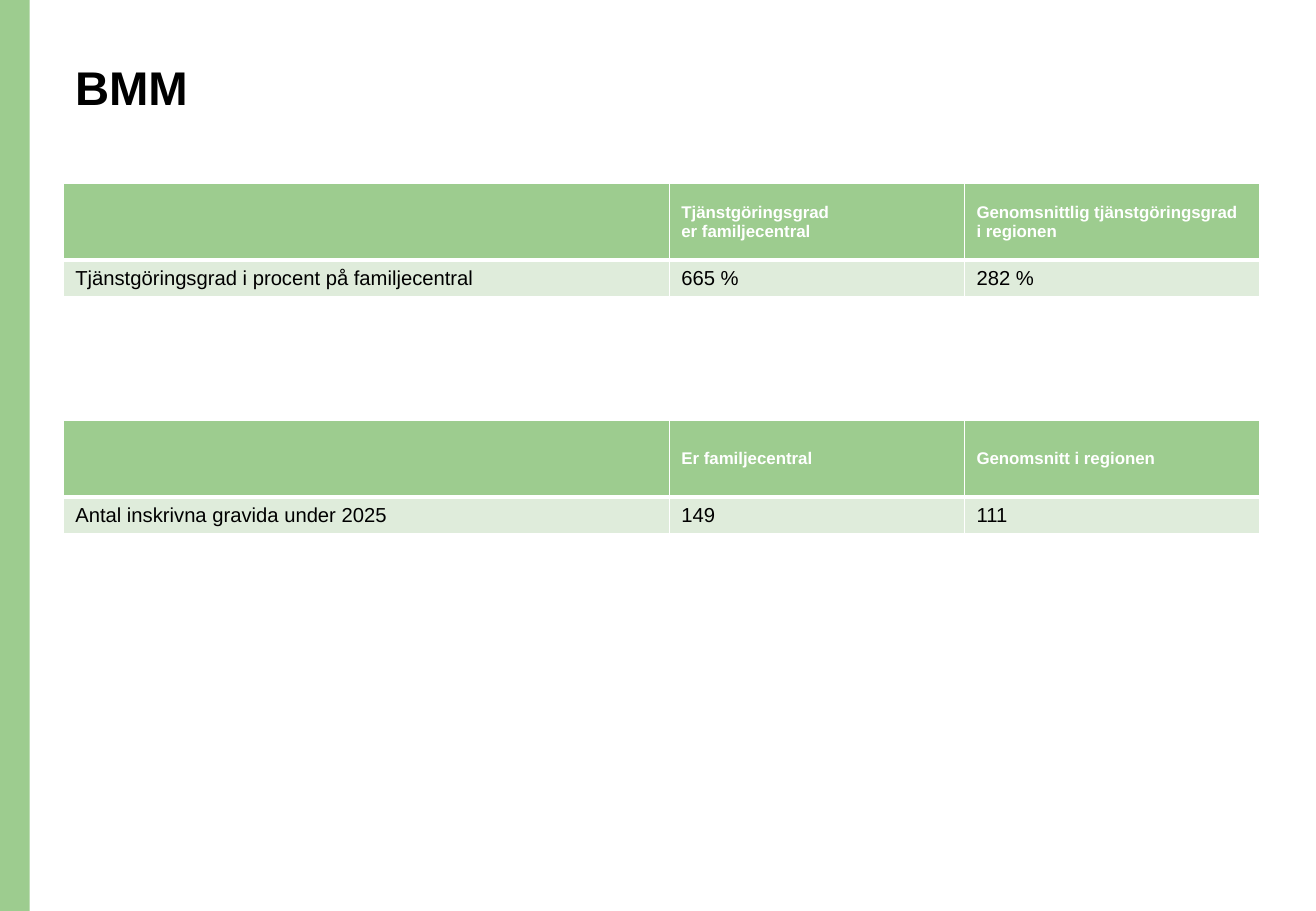
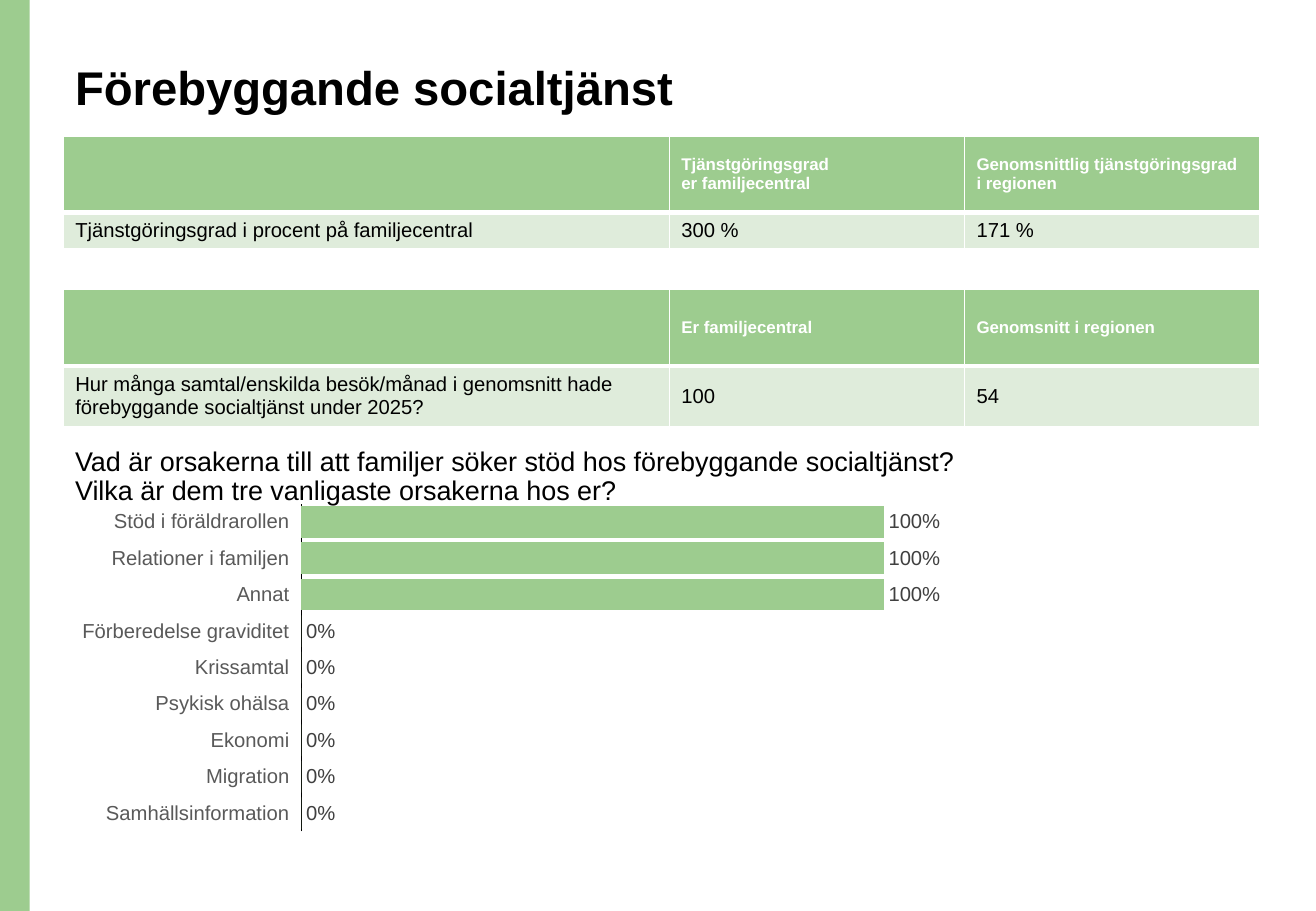
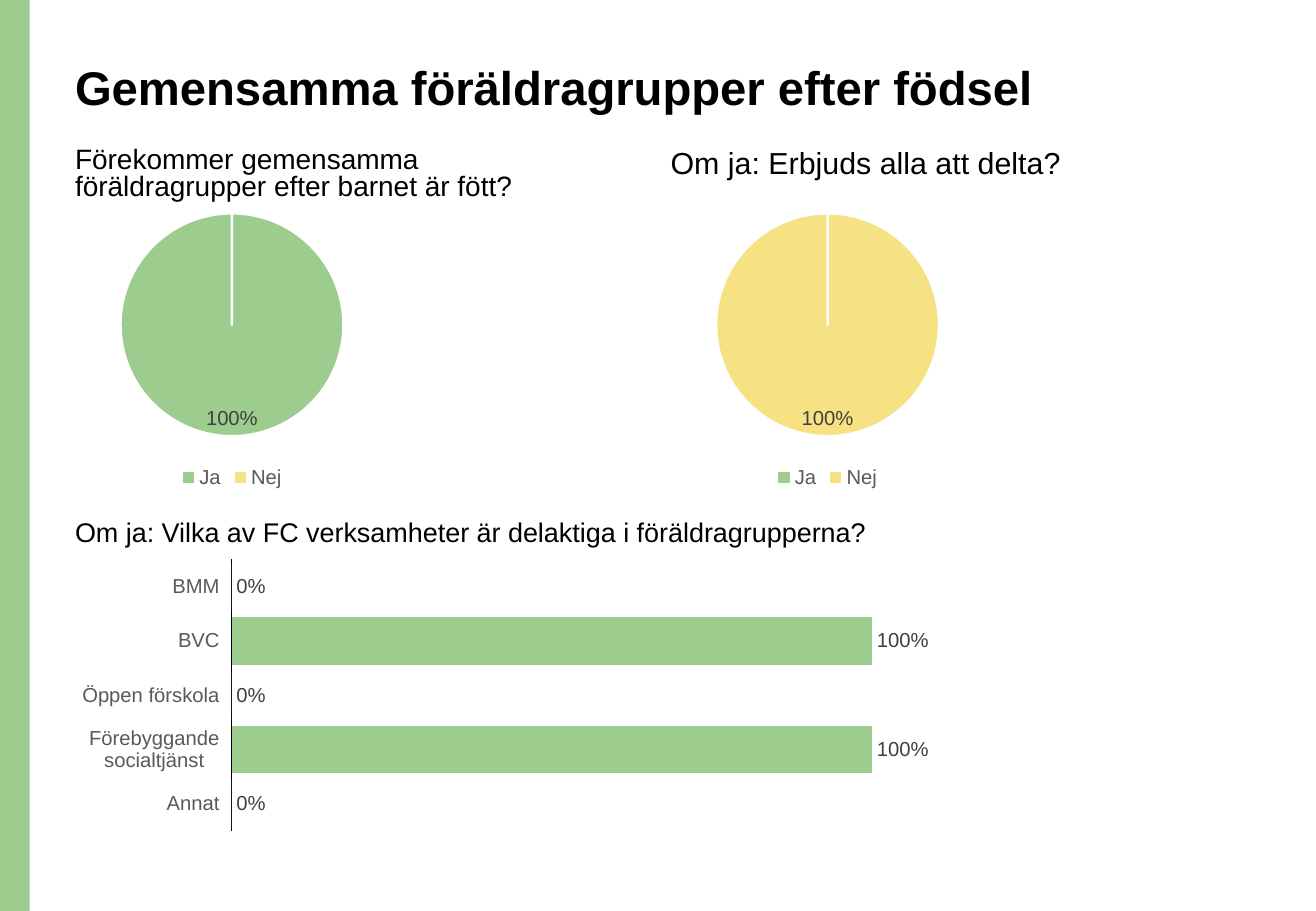
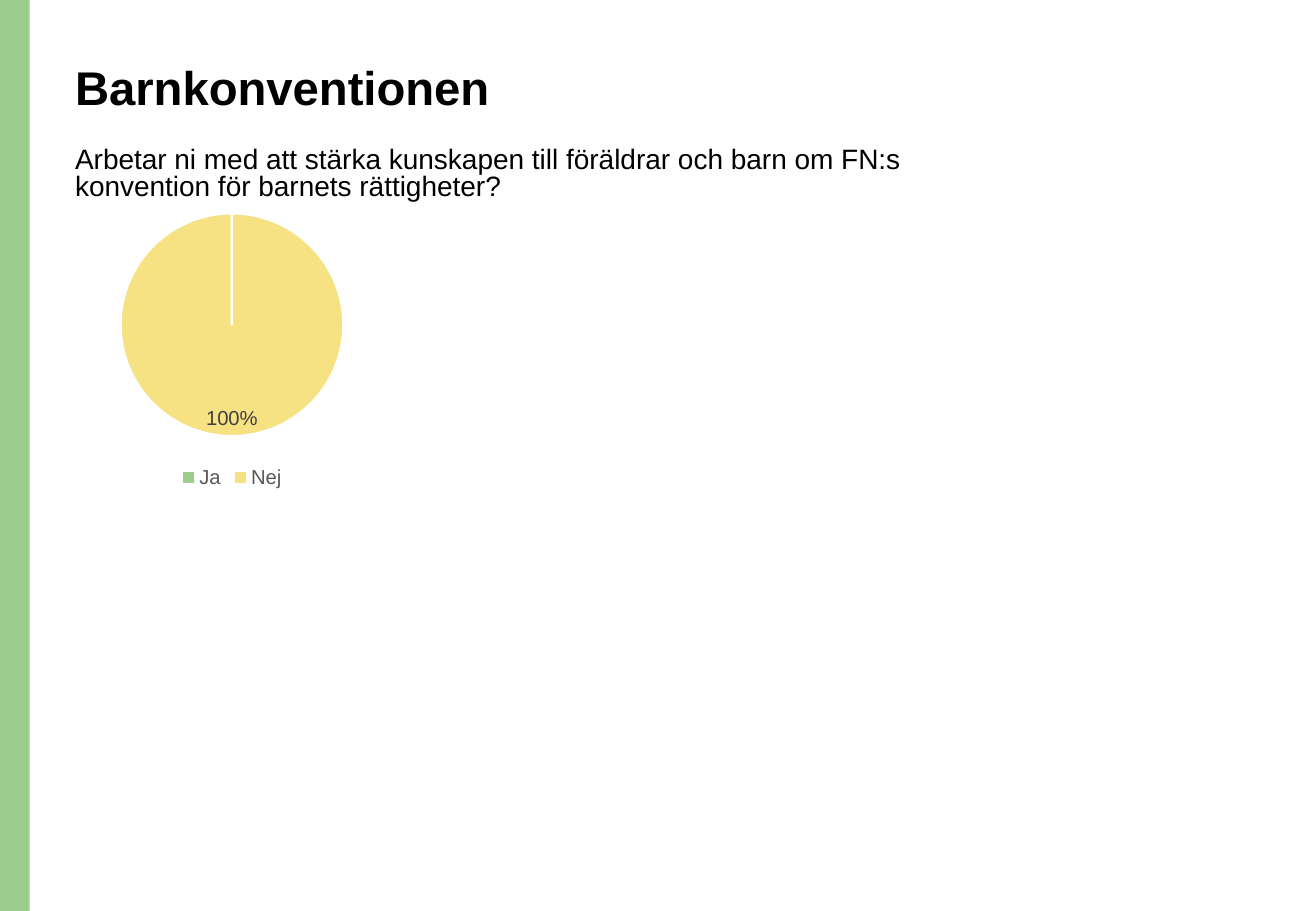
from dataclasses import dataclass

from lxml.etree import SubElement
from pptx import Presentation
from pptx.chart.data import CategoryChartData
from pptx.dml.color import RGBColor
from pptx.enum.chart import XL_CHART_TYPE as ChartType
from pptx.enum.chart import XL_LABEL_POSITION as LabelPosition
from pptx.enum.chart import XL_LEGEND_POSITION as LegendPosition
from pptx.enum.chart import XL_TICK_LABEL_POSITION as TickLabels
from pptx.enum.chart import XL_TICK_MARK as TickMark
from pptx.enum.shapes import MSO_SHAPE as Shape
from pptx.enum.text import MSO_ANCHOR as Anchor
from pptx.oxml.ns import qn
from pptx.util import Cm, Pt


@dataclass(frozen=True)
class Theme:
    font: str = "Arial"
    green: str = "9DCC8F"
    pale_green: str = "DFECDB"
    yellow: str = "F6E183"
    white: str = "FFFFFF"
    black: str = "000000"
    axis_gray: str = "595959"
    label_gray: str = "404040"
    title_size: float = 28
    large_size: float = 18
    compact_size: float = 16.6
    question_size: float = 16
    body_size: float = 12
    header_size: float = 10


THEME = Theme()

# Lengths in centimetres
SLIDE_WIDTH, SLIDE_HEIGHT = 27.51, 19.05
BAND_WIDTH = 0.62
LEFT, RIGHT_COLUMN = 1.32, 13.77
TITLE_BOX = (LEFT, 1.22, 23.72, 2.59)
COLUMN_WIDTHS = (12.67, 6.17, 6.17)
ROW_HEIGHTS = (1.6, 0.72)
QUESTION_WIDTH, QUESTION_HEIGHT = 20.65, 1.6
COMPACT_TOP, COMPACT_HEIGHT = 2.97, 1.45
BAR_WIDTH = 19.99
PIE_TOP, PIE_WIDTH, PIE_HEIGHT = 4.11, 7.06, 6.2

STAFFING_HEADER = ("", "Tjänstgöringsgrad\ner familjecentral",
                   "Genomsnittlig tjänstgöringsgrad\ni regionen")
STAFFING_LABEL = "Tjänstgöringsgrad i procent på familjecentral"
AVERAGE_HEADER = ("", "Er familjecentral", "Genomsnitt i regionen")

SLIDES = [
    ("BMM", [
        ("table", dict(top=3.84, rows=[STAFFING_HEADER,
                                       (STAFFING_LABEL, "665 %", "282 %")])),
        ("table", dict(top=8.79, rows=[
            AVERAGE_HEADER,
            ("Antal inskrivna gravida under 2025", "149", "111")])),
    ]),
    ("Förebyggande socialtjänst", [
        ("question", dict(
            top=9.25,
            text="Vad är orsakerna till att familjer söker stöd hos "
                 "förebyggande socialtjänst?\v"
                 "Vilka är dem tre vanligaste orsakerna hos er?")),
        ("table", dict(top=2.84, rows=[STAFFING_HEADER,
                                       (STAFFING_LABEL, "300 %", "171 %")])),
        ("table", dict(top=6.05, rows=[
            AVERAGE_HEADER,
            ("Hur många samtal/enskilda besök/månad i genomsnitt hade "
             "förebyggande socialtjänst under 2025?", "100", "54")])),
        ("bars", dict(top=10.39, height=7.14, shares={
            "Stöd i föräldrarollen": 1,
            "Relationer i familjen": 1,
            "Annat": 1,
            "Förberedelse graviditet": 0,
            "Krissamtal": 0,
            "Psykisk ohälsa": 0,
            "Ekonomi": 0,
            "Migration": 0,
            "Samhällsinformation": 0})),
    ]),
    ("Gemensamma föräldragrupper efter födsel", [
        ("compact", dict(
            text="Förekommer gemensamma föräldragrupper efter barnet är fött?",
            left=LEFT, width=10.49)),
        ("pie", dict(left=LEFT, shares={"Ja": 1, "Nej": 0})),
        ("compact", dict(
            text="Om ja: Erbjuds alla att delta?", left=RIGHT_COLUMN,
            width=10.49, size=THEME.large_size, spacing=0.9)),
        ("pie", dict(left=RIGHT_COLUMN, shares={"Ja": 0, "Nej": 1})),
        ("bars", dict(top=11.58, height=5.92, shares={
            "BMM": 0,
            "BVC": 1,
            "Öppen förskola": 0,
            "Förebyggande socialtjänst": 1,
            "Annat": 0})),
        ("question", dict(
            top=10.74,
            text="Om ja: Vilka av FC verksamheter är delaktiga i "
                 "föräldragrupperna?")),
    ]),
    ("Barnkonventionen", [
        ("compact", dict(
            text="Arbetar ni med att stärka kunskapen till föräldrar och barn "
                 "om FN:s konvention för barnets rättigheter?",
            left=LEFT, width=17.81)),
        ("pie", dict(left=LEFT, shares={"Ja": 0, "Nej": 1})),
    ]),
]


def rgb(color):
    return RGBColor.from_string(color)


def style_font(font, size, color, bold=False):
    font.name = THEME.font
    font.size = Pt(size)
    font.bold = bold
    font.color.rgb = rgb(color)


def paint(fill, color):
    fill.solid()
    fill.fore_color.rgb = rgb(color)


def add_text(page, text, frame, size, spacing=0.9, bold=False):
    box = page.shapes.add_textbox(*map(Cm, frame))
    box.text_frame.word_wrap = True
    para = box.text_frame.paragraphs[0]
    para.text = text
    para.line_spacing = spacing
    style_font(para.font, size, THEME.black, bold)


def add_question(page, text, top):
    add_text(page, text, (LEFT, top, QUESTION_WIDTH, QUESTION_HEIGHT),
             THEME.question_size)


def add_compact_question(page, text, left, width,
                         size=THEME.compact_size, spacing=0.8):
    add_text(page, text, (left, COMPACT_TOP, width, COMPACT_HEIGHT),
             size, spacing)


def set_borders(cell, **widths):
    """Draw white cell borders; call before the cell is filled."""
    properties = cell._tc.get_or_add_tcPr()
    for side in "LRTB":
        line = SubElement(properties, qn(f"a:ln{side}"),
                          w=str(Pt(widths.get(side, 1))))
        fill = SubElement(line, qn("a:solidFill"))
        SubElement(fill, qn("a:srgbClr"), val=THEME.white)


def add_table(page, top, rows):
    table = page.shapes.add_table(
        len(rows), len(COLUMN_WIDTHS), Cm(LEFT), Cm(top),
        Cm(sum(COLUMN_WIDTHS)), Cm(sum(ROW_HEIGHTS))).table
    for column, width in zip(table.columns, COLUMN_WIDTHS):
        column.width = Cm(width)
    for row, height in zip(table.rows, ROW_HEIGHTS):
        row.height = Cm(height)
    looks = [
        (THEME.green, THEME.header_size, THEME.white, True, {"B": 3}),
        (THEME.pale_green, THEME.body_size, THEME.black, False, {"T": 3}),
    ]
    for row, texts, look in zip(table.rows, rows, looks):
        background, size, color, bold, borders = look
        for cell, text in zip(row.cells, texts):
            set_borders(cell, **borders)
            paint(cell.fill, background)
            cell.vertical_anchor = Anchor.MIDDLE
            cell.text = text
            for para in cell.text_frame.paragraphs:
                style_font(para.font, size, color, bold)


def add_chart(page, kind, shares, frame, label_position, label_format):
    data = CategoryChartData(number_format="0%")
    data.categories = list(shares)
    data.add_series("Series 1", list(shares.values()))
    chart = page.shapes.add_chart(kind, *map(Cm, frame), data).chart
    style_font(chart.font, THEME.header_size, THEME.black)
    chart.has_title = False
    chart.has_legend = False
    plot = chart.plots[0]
    plot.has_data_labels = True
    labels = plot.data_labels
    labels.show_value = True
    labels.number_format = label_format
    labels.number_format_is_linked = False
    labels.position = label_position
    style_font(labels.font, THEME.body_size, THEME.label_gray)
    return chart


def add_bars(page, top, height, shares):
    chart = add_chart(page, ChartType.BAR_CLUSTERED, shares,
                      (LEFT, top, BAR_WIDTH, height),
                      LabelPosition.OUTSIDE_END, "0%")
    plot = chart.plots[0]
    plot.vary_by_categories = False
    plot.gap_width = 15
    paint(plot.series[0].format.fill, THEME.green)

    categories = chart.category_axis
    categories.reverse_order = True
    categories.has_major_gridlines = False
    categories.major_tick_mark = TickMark.NONE
    categories.minor_tick_mark = TickMark.NONE
    categories.tick_label_position = TickLabels.LOW
    categories.format.line.width = Pt(0.75)
    categories.format.line.color.rgb = rgb(THEME.black)
    style_font(categories.tick_labels.font, THEME.body_size, THEME.axis_gray)

    values = chart.value_axis
    values.visible = False
    values.has_major_gridlines = False
    values.minimum_scale, values.maximum_scale = 0, 1.2


def add_pie(page, left, shares):
    # The format leaves the label of an empty slice blank
    chart = add_chart(page, ChartType.PIE, shares,
                      (left, PIE_TOP, PIE_WIDTH, PIE_HEIGHT),
                      LabelPosition.INSIDE_END, "0%;;")
    chart.plots[0].vary_by_categories = True
    for index, color in enumerate((THEME.green, THEME.yellow)):
        look = chart.plots[0].series[0].points[index].format
        paint(look.fill, color)
        look.line.width = Pt(1.5)
        look.line.color.rgb = rgb(THEME.white)
    chart.has_legend = True
    chart.legend.position = LegendPosition.BOTTOM
    chart.legend.include_in_layout = False
    style_font(chart.legend.font, THEME.body_size, THEME.axis_gray)


def add_page(deck, title):
    """Add a slide with the side band and title that all slides share."""
    page = deck.slides.add_slide(deck.slide_layouts[6])
    band = page.shapes.add_shape(Shape.RECTANGLE, 0, 0,
                                 Cm(BAND_WIDTH), deck.slide_height)
    band.shadow.inherit = False
    paint(band.fill, THEME.green)
    band.line.fill.background()
    add_text(page, title, TITLE_BOX, THEME.title_size, bold=True)
    return page


DRAW = {
    "table": add_table,
    "question": add_question,
    "compact": add_compact_question,
    "bars": add_bars,
    "pie": add_pie,
}


def main():
    deck = Presentation()
    deck.slide_width, deck.slide_height = Cm(SLIDE_WIDTH), Cm(SLIDE_HEIGHT)
    for title, parts in SLIDES:
        page = add_page(deck, title)
        for kind, content in parts:
            DRAW[kind](page, **content)
    deck.save("out.pptx")


if __name__ == "__main__":
    main()
